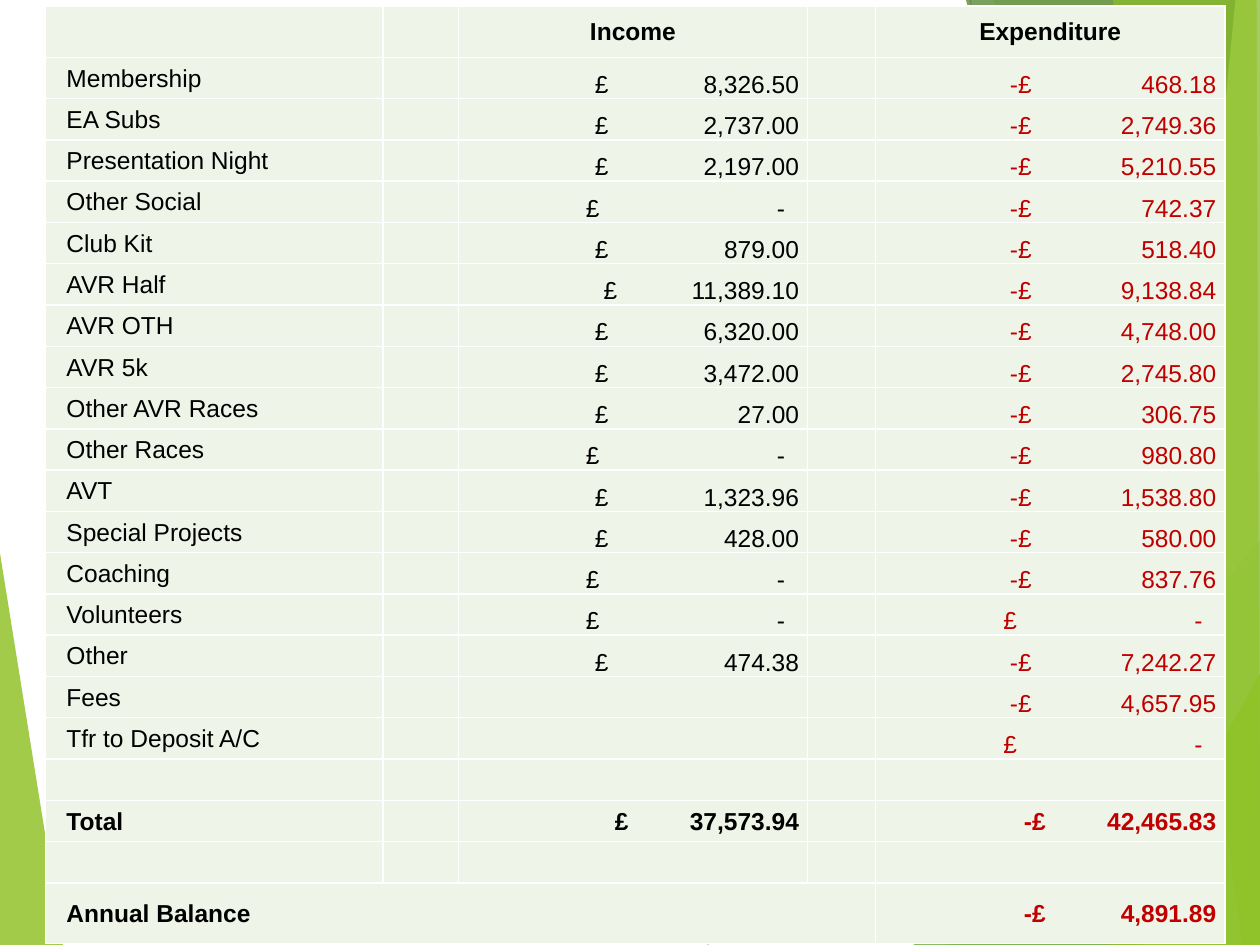
from dataclasses import dataclass

from lxml.etree import SubElement
from pptx import Presentation
from pptx.dml.color import RGBColor
from pptx.enum.shapes import MSO_CONNECTOR
from pptx.enum.text import MSO_ANCHOR, PP_ALIGN
from pptx.oxml.ns import qn
from pptx.util import Pt

BLACK = RGBColor(0x00, 0x00, 0x00)
WHITE = RGBColor(0xFF, 0xFF, 0xFF)
RED = RGBColor(0xC0, 0x00, 0x00)
CELL_GREEN = RGBColor(0xEE, 0xF4, 0xE7)
LEAF = RGBColor(0x90, 0xC2, 0x26)
GRASS = RGBColor(0x54, 0xA0, 0x21)
FOREST = RGBColor(0x3F, 0x78, 0x18)
LIME = RGBColor(0xBF, 0xE4, 0x71)
PALE_GREY = RGBColor(0xD8, 0xD8, 0xD8)
MID_GREY = RGBColor(0xBF, 0xBF, 0xBF)

WIDTH, HEIGHT = 720, 540
INSET = 0.72
COLUMN_WIDTHS = (193, 43, 199.5, 39, 199.5)
HEADER_HEIGHT, ENTRY_HEIGHT, BALANCE_HEIGHT = 29.3, 23.6, 34.7
INCOME, EXPENDITURE = 2, 4


@dataclass(frozen=True)
class Facet:
    points: tuple[tuple[float, float], ...]
    color: RGBColor
    opacity: int


@dataclass(frozen=True)
class Ray:
    start: tuple[float, float]
    end: tuple[float, float]
    color: RGBColor


@dataclass(frozen=True)
class Entry:
    label: str = ""
    income: str = ""
    expenditure: str = ""
    bold: bool = False


RAYS = (
    Ray((404, HEIGHT), (WIDTH, 329), PALE_GREY),
    Ray((554.5, 0), (651, HEIGHT), MID_GREY),
)
RIGHT_EDGE = ((WIDTH, HEIGHT), (WIDTH, 0))
LEFT_FACET = Facet(((0, 316), (35.5, HEIGHT), (0, HEIGHT)), LEAF, 84)
RIGHT_FACETS = (
    Facet(((702, 0), (543, HEIGHT), *RIGHT_EDGE), LEAF, 29),
    Facet(((567.5, 0), (661.5, HEIGHT), *RIGHT_EDGE), LEAF, 20),
    Facet(((522.5, HEIGHT), (WIDTH, 309), (WIDTH, HEIGHT)), GRASS, 71),
    Facet(((552.5, 0), (698.5, HEIGHT), *RIGHT_EDGE), FOREST, 69),
    Facet(((706.5, 0), (653, HEIGHT), *RIGHT_EDGE), LIME, 69),
    Facet(((636, 0), (710, HEIGHT), (WIDTH, HEIGHT), (718.5, 0)), LEAF, 64),
    Facet(((634.5, HEIGHT), (WIDTH, 385), (WIDTH, HEIGHT)), LEAF, 80),
)
ENTRIES = (
    Entry("Membership", "8,326.50", "468.18"),
    Entry("EA Subs", "2,737.00", "2,749.36"),
    Entry("Presentation Night", "2,197.00", "5,210.55"),
    Entry("Other Social", "-", "742.37"),
    Entry("Club Kit", "879.00", "518.40"),
    Entry("AVR Half", "11,389.10", "9,138.84"),
    Entry("AVR OTH", "6,320.00", "4,748.00"),
    Entry("AVR 5k", "3,472.00", "2,745.80"),
    Entry("Other AVR Races", "27.00", "306.75"),
    Entry("Other Races", "-", "980.80"),
    Entry("AVT", "1,323.96", "1,538.80"),
    Entry("Special Projects", "428.00", "580.00"),
    Entry("Coaching", "-", "837.76"),
    Entry("Volunteers", "-", "-"),
    Entry("Other", "474.38", "7,242.27"),
    Entry("Fees", "", "4,657.95"),
    Entry("Tfr to Deposit A/C", "", "-"),
    Entry(),
    Entry("Total", "37,573.94", "42,465.83", True),
    Entry(),
    Entry("Annual Balance", "", "4,891.89", True),
)


def draw_facet(page, facet: Facet) -> None:
    builder = page.shapes.build_freeform(*facet.points[0], scale=Pt(1))
    builder.add_line_segments(facet.points[1:], close=True)
    shape = builder.convert_to_shape()
    shape.shadow.inherit = False
    shape.line.fill.background()
    shape.fill.solid()
    shape.fill.fore_color.rgb = facet.color
    color = shape._element.spPr.find(qn("a:solidFill"))[0]
    SubElement(color, qn("a:alpha"), val=str(facet.opacity * 1000))


def draw_ray(page, ray: Ray) -> None:
    ends = [Pt(value) for value in (*ray.start, *ray.end)]
    line = page.shapes.add_connector(MSO_CONNECTOR.STRAIGHT, *ends)
    line.line.color.rgb = ray.color
    line.line.width = Pt(0.75)
    SubElement(line._element.spPr, qn("a:effectLst"))


def style_cell(cell) -> None:
    cell.margin_left = cell.margin_right = cell.margin_top = Pt(INSET)
    cell.margin_bottom = 0
    cell.vertical_anchor = MSO_ANCHOR.MIDDLE
    properties = cell._tc.get_or_add_tcPr()
    for side in ("L", "R", "T", "B"):
        border = SubElement(properties, qn(f"a:ln{side}"), w=str(Pt(1)))
        fill = SubElement(border, qn("a:solidFill"))
        SubElement(fill, qn("a:srgbClr"), val=str(WHITE))
    cell.fill.solid()
    cell.fill.fore_color.rgb = CELL_GREEN


def write_cell(cell, text: str, color: RGBColor, bold: bool,
               align: PP_ALIGN = PP_ALIGN.LEFT, tabs: tuple[float, ...] = ()) -> None:
    para = cell.text_frame.paragraphs[0]
    para.text = text
    para.alignment = align
    if tabs:
        tab_list = SubElement(para._p.get_or_add_pPr(), qn("a:tabLst"))
        for position in tabs:
            SubElement(tab_list, qn("a:tab"), pos=str(Pt(position)), algn="r")
    para.font.name = "Arial"
    para.font.size = Pt(14)
    para.font.bold = bold
    para.font.color.rgb = color


def write_amount(cell, figure: str, expense: bool, bold: bool) -> None:
    is_nil = figure == "-"
    if is_nil:
        currency_edge = 80
    elif bold:
        currency_edge = 96.5
    elif len(figure) > 8:
        currency_edge = 90
    else:
        currency_edge = 88.5 if expense else 85
    currency = "-£" if expense and not is_nil else "£"
    tabs = (currency_edge, 186 if is_nil else 194)
    color = RED if expense else BLACK
    write_cell(cell, f"\t{currency}\t{figure}", color, bold, tabs=tabs)
    cell.vertical_anchor = MSO_ANCHOR.MIDDLE if bold else MSO_ANCHOR.BOTTOM


def draw_accounts(page) -> None:
    heights = [HEADER_HEIGHT, *[ENTRY_HEIGHT] * (len(ENTRIES) - 1), BALANCE_HEIGHT]
    frame = page.shapes.add_table(
        len(heights), len(COLUMN_WIDTHS), Pt(26), Pt(3.5),
        Pt(sum(COLUMN_WIDTHS)), Pt(sum(heights)))
    table = frame.table
    table.first_row = table.horz_banding = False
    for column, width in zip(table.columns, COLUMN_WIDTHS):
        column.width = Pt(width)
    for row, height in zip(table.rows, heights):
        row.height = Pt(height)
    for cell in table.iter_cells():
        style_cell(cell)
    for column, title in ((INCOME, "Income"), (EXPENDITURE, "Expenditure")):
        write_cell(table.cell(0, column), title, BLACK, True, PP_ALIGN.CENTER)
    for row, entry in enumerate(ENTRIES, start=1):
        if entry.label:
            label = table.cell(row, 0)
            label.margin_left = Pt(12)
            write_cell(label, entry.label, BLACK, entry.bold)
        for column, figure in ((INCOME, entry.income), (EXPENDITURE, entry.expenditure)):
            if figure:
                write_amount(table.cell(row, column), figure, column == EXPENDITURE, entry.bold)
    last = len(ENTRIES)
    table.cell(last, 0).merge(table.cell(last, EXPENDITURE - 1))


def main() -> None:
    deck = Presentation()
    deck.slide_width, deck.slide_height = Pt(WIDTH), Pt(HEIGHT)
    page = deck.slides.add_slide(deck.slide_layouts[6])
    draw_facet(page, LEFT_FACET)
    for ray in RAYS:
        draw_ray(page, ray)
    for facet in RIGHT_FACETS:
        draw_facet(page, facet)
    draw_accounts(page)
    deck.save("out.pptx")


if __name__ == "__main__":
    main()
